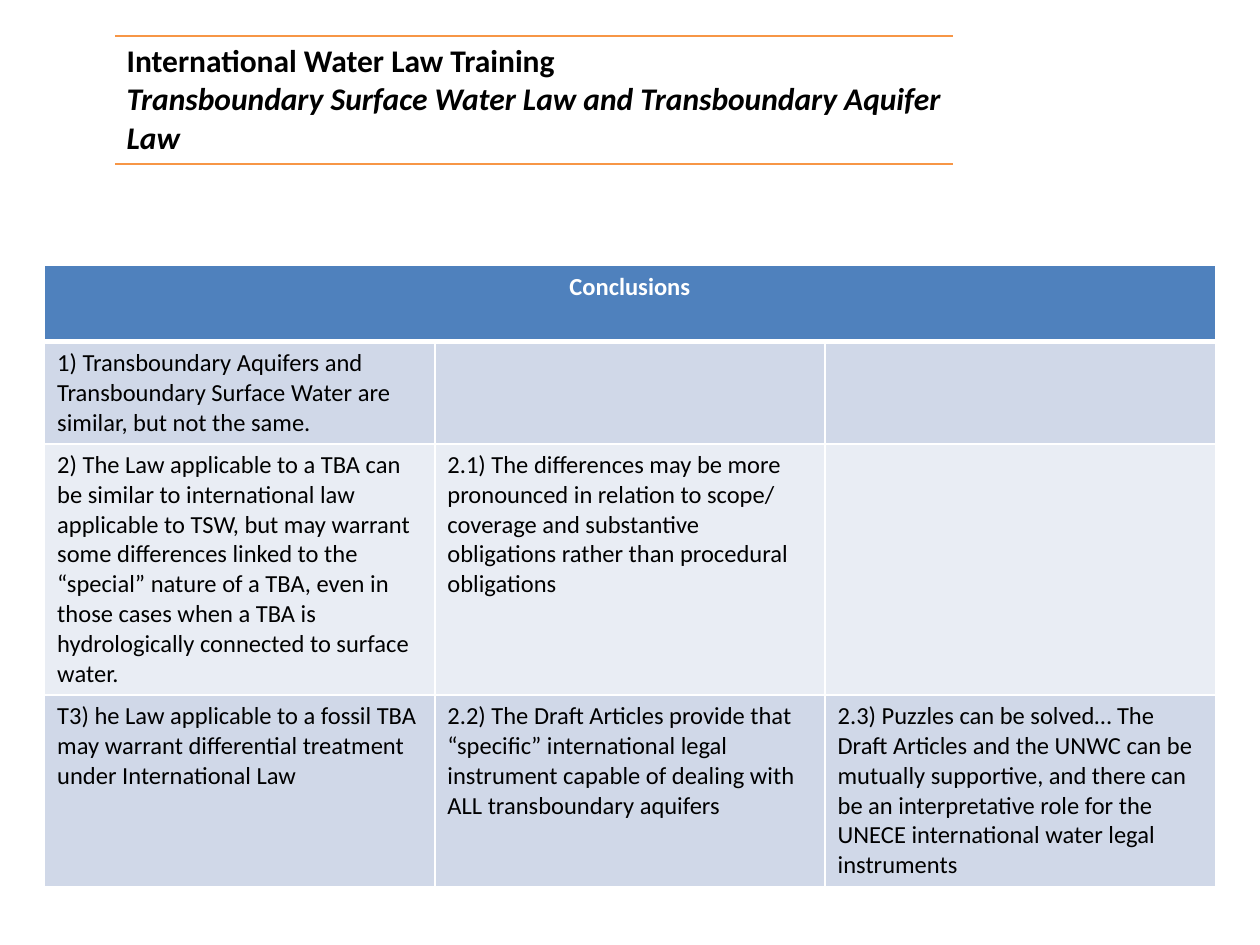
from lxml.etree import SubElement
from pptx import Presentation
from pptx.dml.color import RGBColor
from pptx.enum.text import PP_ALIGN
from pptx.oxml.ns import qn
from pptx.util import Cm, Pt

FONT = "Calibri"
BLACK = RGBColor(0x00, 0x00, 0x00)
WHITE = RGBColor(0xFF, 0xFF, 0xFF)
ORANGE = RGBColor(0xF7, 0x96, 0x46)
BLUE = RGBColor(0x4F, 0x81, 0xBD)
BANDS = [RGBColor(0xD0, 0xD8, 0xE8), RGBColor(0xE9, 0xED, 0xF4)]

TITLE = ["International Water Law Training",
         "Transboundary Surface Water Law and Transboundary Aquifer Law"]
HEAD = "Conclusions"
POINTS = [
    ["1) Transboundary Aquifers and Transboundary Surface Water are similar, "
     "but not the same.", "", ""],
    ["2) The Law applicable to a TBA can be similar to international law "
     "applicable to TSW, but may warrant some differences linked to the "
     "“special” nature of a TBA, even in those cases when a TBA is "
     "hydrologically connected to surface water.",
     "2.1) The differences may be more pronounced in relation to scope/ "
     "coverage and substantive obligations rather than procedural "
     "obligations", ""],
    ["T3) he Law applicable to a fossil TBA may warrant differential "
     "treatment under International Law",
     "2.2) The Draft Articles provide that “specific” international legal "
     "instrument capable of dealing with ALL transboundary aquifers",
     "2.3) Puzzles can be solved… The Draft Articles and the UNWC can be "
     "mutually supportive, and there can be an interpretative role for the "
     "UNECE international water legal instruments"],
]
ROWS = [Cm(1.54), Cm(2.05), Cm(5.06), Cm(3.86)]


def add_grid(slide, rows, cols, box):
    """Add a table without banding to the box (left, top, width, height)."""
    grid = slide.shapes.add_table(rows, cols, *box).table
    grid.first_row = grid.horz_banding = False
    return grid


def set_edges(cell, color, sides="LRTB", **widths):
    """Draw the named cell sides 1 pt wide, unless a width is given."""
    props = cell._tc.get_or_add_tcPr()
    for spot, side in enumerate(sides):
        line = SubElement(props, qn(f"a:ln{side}"),
                          w=str(Pt(widths.get(side, 1))))
        fill = SubElement(line, qn("a:solidFill"))
        SubElement(fill, qn("a:srgbClr"), val=str(color))
        props.insert(spot, line)  # edges come before the cell fill


def style(para, size, color, bold=False, italic=False):
    font = para.font
    font.name, font.size = FONT, Pt(size)
    font.bold, font.italic = bold, italic
    font.color.rgb = color
    for run in para.runs:
        run.font.name, run.font.size = FONT, Pt(size)
        run.font.bold, run.font.italic = bold, italic
        run.font.color.rgb = color


def add_title(slide, box):
    """Two heading lines between orange rules."""
    cell = add_grid(slide, 1, 1, box).cell(0, 0)
    cell.text_frame.text = "\n".join(TITLE)
    for row, para in enumerate(cell.text_frame.paragraphs):
        style(para, 18, BLACK, bold=True, italic=row == 1)
    cell.fill.background()
    set_edges(cell, ORANGE, "TB")


def add_points(slide, box):
    """Conclusions under one merged heading."""
    cols = len(POINTS[0])
    grid = add_grid(slide, len(ROWS), cols, box)
    grid.first_row = True
    for row, high in zip(grid.rows, ROWS):
        row.height = high

    # Heading
    for col in range(cols):
        cell = grid.cell(0, col)
        cell.fill.solid()
        cell.fill.fore_color.rgb = BLUE
        set_edges(cell, WHITE, B=3)
    head = grid.cell(0, 0)
    head.merge(grid.cell(0, cols - 1))
    head.text_frame.text = HEAD
    para = head.text_frame.paragraphs[0]
    para.alignment = PP_ALIGN.CENTER
    style(para, 14, WHITE, bold=True)

    # Body
    for row, texts in enumerate(POINTS, 1):
        for col, text in enumerate(texts):
            cell = grid.cell(row, col)
            cell.fill.solid()
            cell.fill.fore_color.rgb = BANDS[(row - 1) % 2]
            set_edges(cell, WHITE, T=3 if row == 1 else 1)
            if text:
                cell.text_frame.text = text
                style(cell.text_frame.paragraphs[0], 14, BLACK)


def main():
    deck = Presentation()
    deck.slide_width, deck.slide_height = Cm(25.4), Cm(19.05)
    slide = deck.slides.add_slide(deck.slide_layouts[6])
    add_title(slide, (Cm(2.3), Cm(0.73), Cm(16.93), Cm(2.58)))
    add_points(slide, (Cm(0.9), Cm(5.35), Cm(23.6), sum(ROWS)))
    deck.save("out.pptx")


if __name__ == "__main__":
    main()
